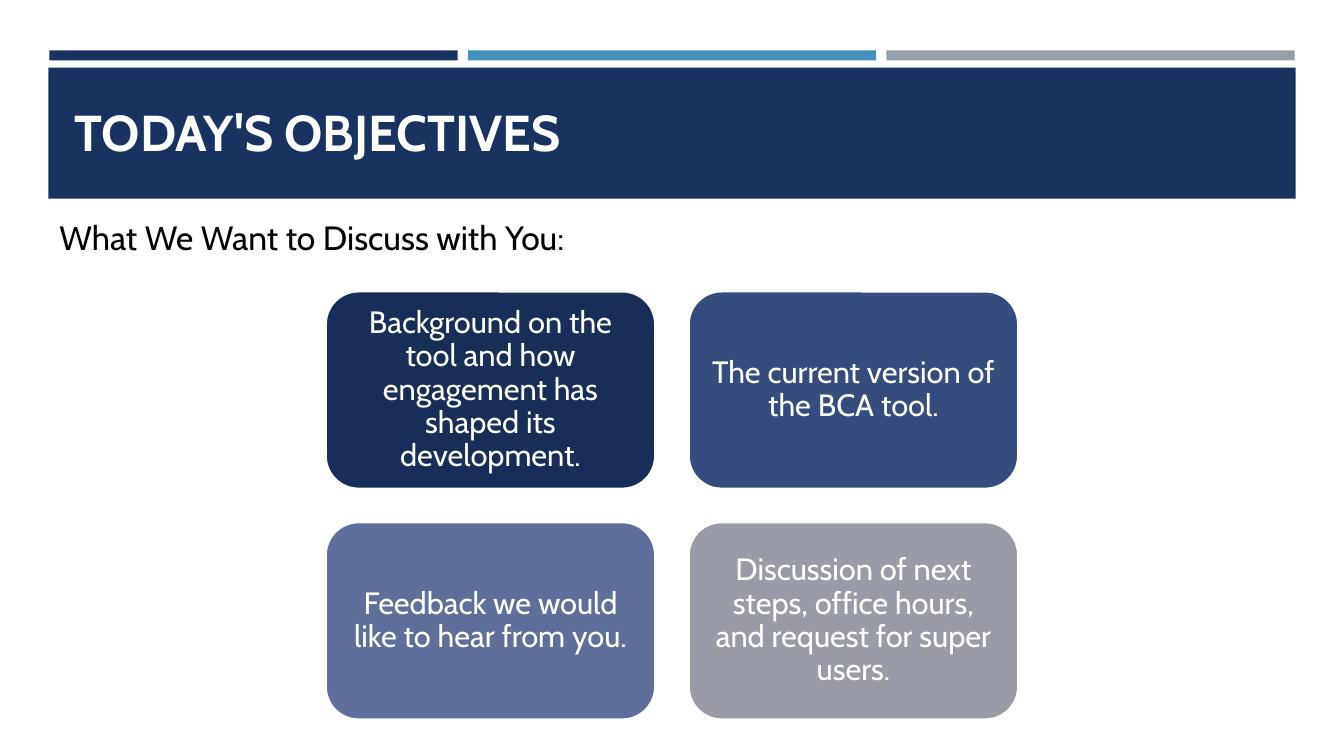
from pptx import Presentation
from pptx.dml.color import RGBColor
from pptx.enum.shapes import MSO_SHAPE as Preset
from pptx.enum.text import MSO_ANCHOR as Anchor, PP_ALIGN as Align
from pptx.util import Inches, Pt

FONT = "Cabin"
COLORS = {
    "navy": "1A3260",
    "blue": "4590B8",
    "gray": "969FA7",
    "white": "FFFFFF",
    "black": "000000",
}
CARDS = [
    ("Background on the tool and how engagement has shaped its development.", "182D57"),
    ("The current version of the BCA tool.", "364B7E"),
    ("Feedback we would like to hear from you.", "5F6E9A"),
    ("Discussion of next steps, office hours, and request for super users.", "999CA6"),
]


def rgb(value):
    return RGBColor.from_string(value)


def add_block(page, preset, left, top, width, height, fill):
    block = page.shapes.add_shape(
        preset, Inches(left), Inches(top), Inches(width), Inches(height))
    block.shadow.inherit = False
    block.fill.solid()
    block.fill.fore_color.rgb = rgb(fill)
    block.line.fill.background()
    return block


def write(box, text, size, color, anchor, bold=False):
    frame = box.text_frame
    frame.word_wrap = True
    frame.vertical_anchor = anchor
    frame.text = text
    para = frame.paragraphs[0]
    font = para.runs[0].font
    font.name, font.size, font.bold = FONT, Pt(size), bold
    font.color.rgb = rgb(color)
    return para


def add_label(page, left, top, width, height, *text_style, bold=False):
    box = page.shapes.add_textbox(
        Inches(left), Inches(top), Inches(width), Inches(height))
    write(box, *text_style, bold=bold)


def add_card(page, left, top, text, fill):
    card = add_block(page, Preset.ROUNDED_RECTANGLE, left, top, 3.27, 1.96, fill)
    card.line.color.rgb = rgb(COLORS["white"])
    card.line.width = Pt(1.75)
    frame = card.text_frame
    frame.margin_left = frame.margin_right = Inches(0.09)
    frame.margin_top = frame.margin_bottom = Inches(0.09)
    para = write(card, text, 22, COLORS["white"], Anchor.MIDDLE)
    para.alignment = Align.CENTER
    para.line_spacing = 0.9


def main():
    deck = Presentation()
    deck.slide_width, deck.slide_height = Inches(13.33), Inches(7.5)
    page = deck.slides.add_slide(deck.slide_layouts[6])

    # Accent strips across the top
    for column, name in enumerate(("navy", "blue", "gray")):
        add_block(page, Preset.RECTANGLE, 0.49 + column * 4.15, 0.5, 4.05, 0.1,
                  COLORS[name])

    # Title band and lead-in
    add_block(page, Preset.RECTANGLE, 0.48, 0.67, 12.37, 1.3, COLORS["navy"])
    add_label(page, 0.64, 0.77, 12.06, 0.88, "TODAY'S OBJECTIVES", 36,
              COLORS["white"], Anchor.BOTTOM, bold=True)
    add_label(page, 0.49, 1.51, 12.06, 1.68, "What We Want to Discuss with You:", 24,
              COLORS["black"], Anchor.MIDDLE)

    # Two-by-two grid of objectives
    for index, (text, fill) in enumerate(CARDS):
        row, column = divmod(index, 2)
        add_card(page, 3.23 + column * 3.6, 2.89 + row * 2.29, text, fill)

    deck.save("out.pptx")


if __name__ == "__main__":
    main()
